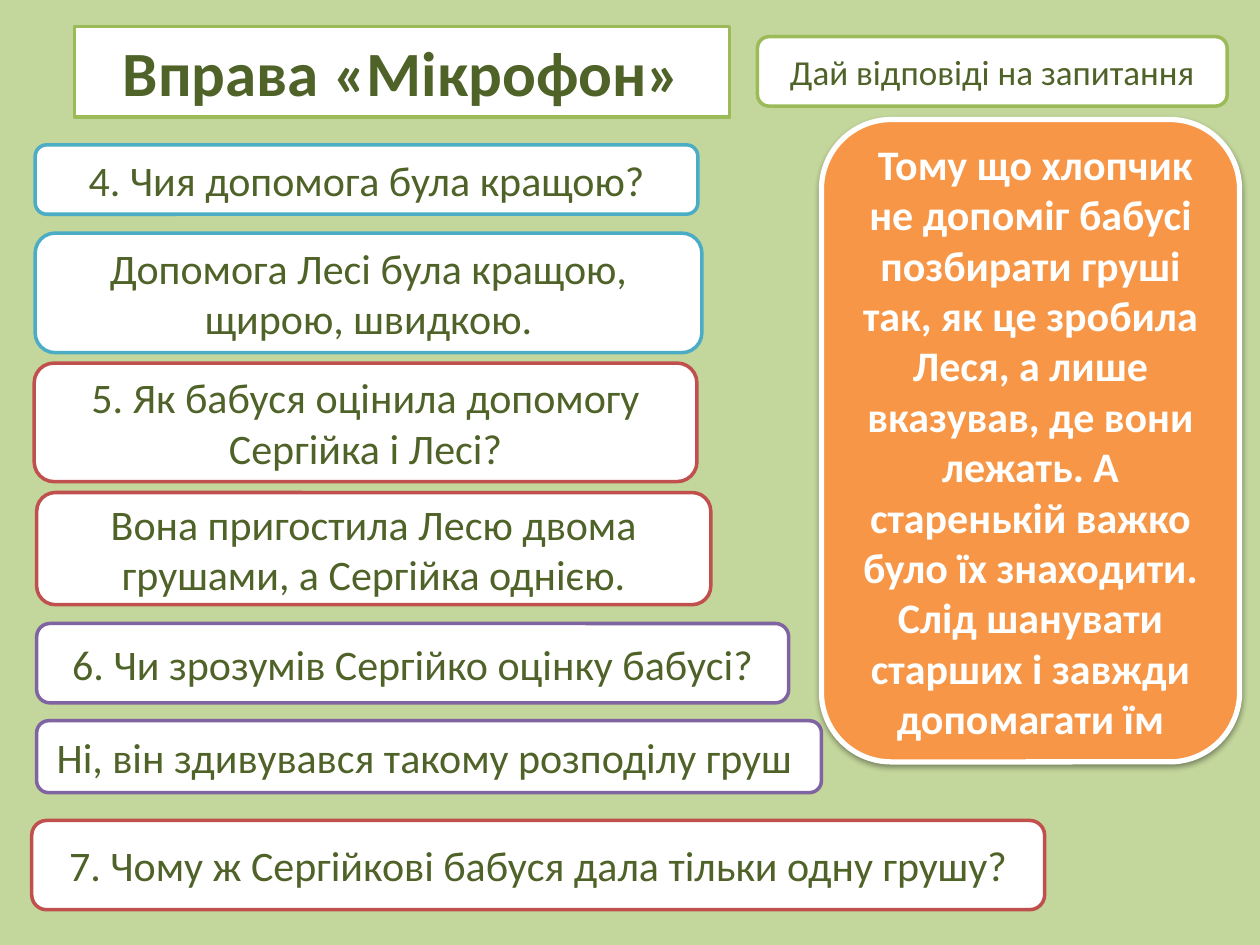
import pptx
import pptx.dml.color
import pptx.enum.shapes
import pptx.enum.text
import pptx.oxml
import pptx.oxml.ns
import pptx.util
from pptx.util import Cm

BACKGROUND, WHITE, DARK_GREEN = "C3D69B", "FFFFFF", "4F6228"
GREEN, BLUE, RED, PURPLE, ORANGE = "9BBB59", "4BACC6", "C0504D", "8064A2", "F79646"

TITLE = ("Вправа «Мікрофон»", (1.5, 0.53, 13.21, 1.83), GREEN)
PROMPT = ("Дай відповіді на запитання", (15.27, 0.74, 9.47, 1.4), GREEN)
# text, (left, top, width, height) in cm, outline
QUESTIONS_AND_ANSWERS = [
    ("4. Чия допомога була кращою?", (0.71, 2.92, 13.36, 1.4), BLUE),
    ("Допомога Лесі була кращою, щирою, швидкою.", (0.71, 4.7, 13.44, 2.41), BLUE),
    ("5. Як бабуся оцінила допомогу Сергійка і Лесі?", (0.69, 7.32, 13.36, 2.39), RED),
    ("Вона пригостила Лесю двома грушами, а Сергійка однією.",
     (0.74, 9.93, 13.59, 2.26), RED),
    ("6. Чи зрозумів Сергійко оцінку бабусі?", (0.74, 12.57, 15.16, 1.6), PURPLE),
    ("Ні, він здивувався такому розподілу груш ", (0.74, 14.53, 15.82, 1.45), PURPLE),
    (" 7. Чому ж Сергійкові бабуся дала тільки одну грушу? ",
     (0.64, 16.54, 20.42, 1.8), RED),
]
LAST_ANSWER = (
    " Тому що хлопчик не допоміг бабусі позбирати груші так, як це зробила Леся, "
    "а лише вказував, де вони лежать. А старенькій важко було їх знаходити. "
    "Слід шанувати старших і завжди допомагати їм",
    (16.56, 2.41, 8.43, 12.95), WHITE)


def color(hex_value):
    return pptx.dml.color.RGBColor.from_string(hex_value)


def format_box(shape, content, size=24, bold=False, fill=WHITE,
               text_color=DARK_GREEN, line_width=2):
    text, position, outline = content
    shape.left, shape.top, shape.width, shape.height = map(Cm, position)
    shape.fill.solid()
    shape.fill.fore_color.rgb = color(fill)
    shape.line.color.rgb = color(outline)
    shape.line.width = pptx.util.Pt(line_width)
    frame = shape.text_frame
    frame.text = text
    frame.word_wrap = True
    frame.auto_size = pptx.enum.text.MSO_AUTO_SIZE.NONE
    frame.vertical_anchor = pptx.enum.text.MSO_ANCHOR.MIDDLE
    paragraph = frame.paragraphs[0]
    paragraph.alignment = pptx.enum.text.PP_ALIGN.CENTER
    font = paragraph.runs[0].font
    font.name, font.size, font.bold = "Calibri", pptx.util.Pt(size), bold
    font.color.rgb = color(text_color)


def add_box(slide, content, **style):
    shape = slide.shapes.add_shape(
        pptx.enum.shapes.MSO_SHAPE.ROUNDED_RECTANGLE, *map(Cm, content[1]))
    shape.shadow.inherit = False
    format_box(shape, content, **style)
    return shape


def round_corners(placeholder):
    geometry = pptx.oxml.parse_xml(
        f'<a:prstGeom {pptx.oxml.ns.nsdecls("a")} prst="roundRect"><a:avLst/></a:prstGeom>')
    placeholder.element.spPr.find(pptx.oxml.ns.qn("a:xfrm")).addnext(geometry)


def add_shadow(shape):
    effects = shape.element.spPr.find(pptx.oxml.ns.qn("a:effectLst"))
    effects.append(pptx.oxml.parse_xml(
        f'<a:outerShdw {pptx.oxml.ns.nsdecls("a")} blurRad="40000" dist="20000" '
        'dir="5400000" rotWithShape="0"><a:srgbClr val="000000">'
        '<a:alpha val="38000"/></a:srgbClr></a:outerShdw>'))


def main():
    presentation = pptx.Presentation()
    presentation.slide_width, presentation.slide_height = Cm(25.4), Cm(19.05)
    slide = presentation.slides.add_slide(presentation.slide_layouts[5])
    slide.background.fill.solid()
    slide.background.fill.fore_color.rgb = color(BACKGROUND)

    title = slide.shapes.title
    format_box(title, TITLE, size=36, bold=True)
    round_corners(title)
    add_box(slide, PROMPT, size=20)
    for content in QUESTIONS_AND_ANSWERS:
        add_box(slide, content)
    last_answer = add_box(slide, LAST_ANSWER, bold=True, fill=ORANGE,
                          text_color=WHITE, line_width=3)
    add_shadow(last_answer)
    presentation.save("out.pptx")


if __name__ == "__main__":
    main()
